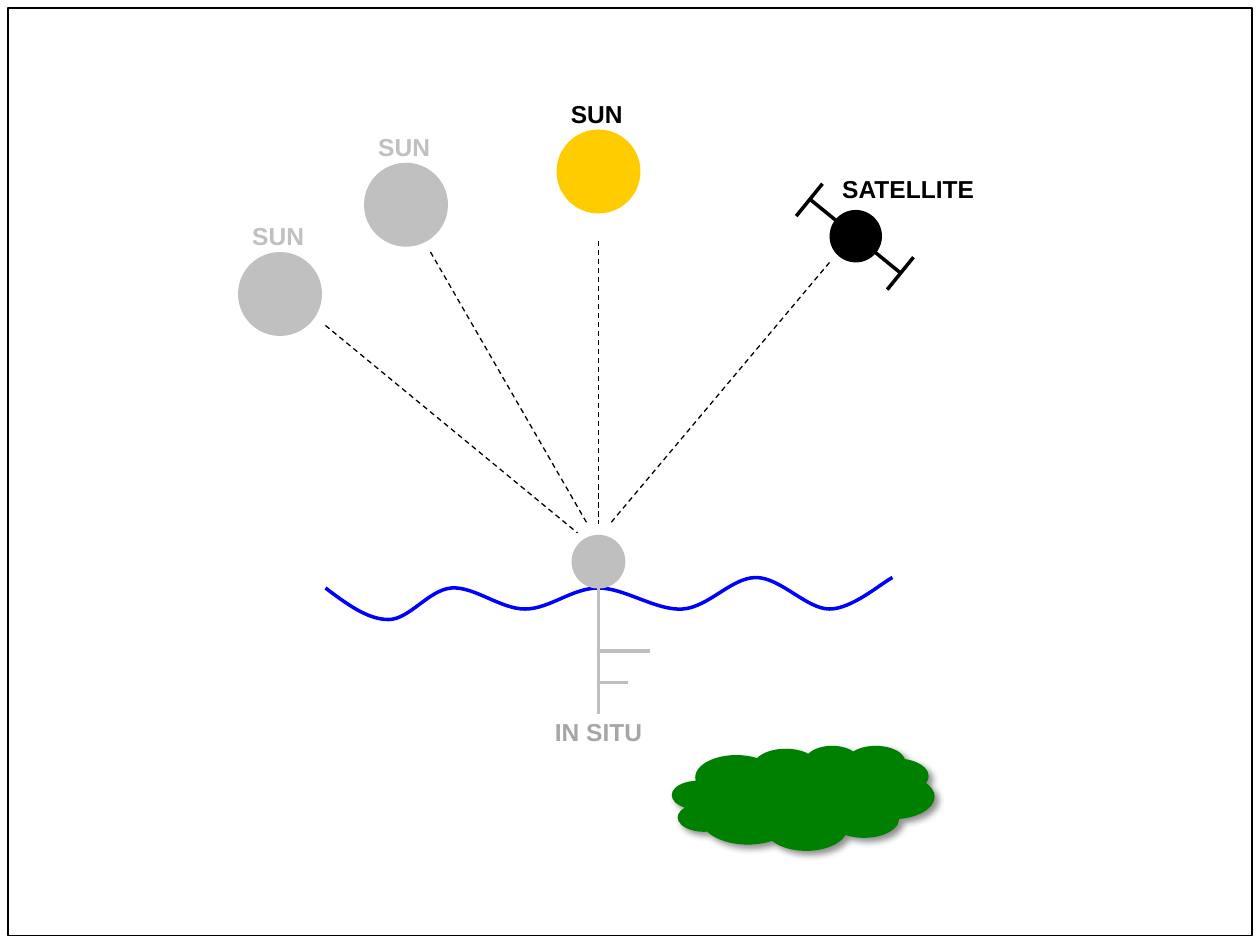
from lxml import etree
from pptx import Presentation
from pptx.dml.color import RGBColor
from pptx.enum.dml import MSO_LINE
from pptx.enum.shapes import MSO_CONNECTOR, MSO_SHAPE
from pptx.enum.text import MSO_AUTO_SIZE, PP_ALIGN
from pptx.oxml import parse_xml
from pptx.oxml.ns import qn
from pptx.util import Pt

RECT, OVAL, CLOUD = MSO_SHAPE.RECTANGLE, MSO_SHAPE.OVAL, MSO_SHAPE.CLOUD
STRAIGHT, DASH = MSO_CONNECTOR.STRAIGHT, MSO_LINE.DASH
CENTER, GROW = PP_ALIGN.CENTER, MSO_AUTO_SIZE.SHAPE_TO_FIT_TEXT
FONT = "Arial"
COLORS = {
    "black": "000000",
    "sun": "FFCC00",
    "faded": "C0C0C0",
    "buoy": "BFBFBF",
    "note": "A6A6A6",
    "sea": "0000FF",
    "land": "008000",
}
# Start of the wave, then two control points and an end point per curve
WAVE = [
    (186, 336),
    (198, 345), (210, 354), (222, 354),
    (234, 354), (245, 337), (258, 336),
    (271, 335), (286, 348), (300, 348),
    (314, 348), (327, 336), (342, 336),
    (357, 336), (375, 349), (390, 348),
    (405, 347), (418, 330), (432, 330),
    (446, 330), (461, 348), (474, 348),
    (487, 348), (504, 333), (510, 330),
]
RAYS = [
    ((246, 144), (336, 300)),
    ((186, 186), (330, 304.5)),
    ((342, 137.5), (342, 299.5)),
    ((474, 150), (348, 300)),
]
SHADOW = """
<a:effectLst xmlns:a="http://schemas.openxmlformats.org/drawingml/2006/main">
  <a:outerShdw blurRad="50800" dist="38100" dir="2700000" algn="tl" rotWithShape="0">
    <a:srgbClr val="000000"><a:alpha val="43000"/></a:srgbClr>
  </a:outerShdw>
</a:effectLst>"""


def rgb(name):
    return RGBColor.from_string(COLORS[name])


def shape(shapes, kind, left, top, width, height, fill=None, line=None):
    item = shapes.add_shape(kind, Pt(left), Pt(top), Pt(width), Pt(height))
    item.shadow.inherit = False
    if fill:
        item.fill.solid()
        item.fill.fore_color.rgb = rgb(fill)
    else:
        item.fill.background()
    if line:
        item.line.color.rgb = rgb(line)
        item.line.width = Pt(0.75)
    else:
        item.line.fill.background()
    return item


def line(shapes, start, end, color="black", width=2, dash=None):
    item = shapes.add_connector(STRAIGHT, *map(Pt, start + end))
    item.line.color.rgb = rgb(color)
    item.line.width = Pt(width)
    if dash:
        item.line.dash_style = dash
    etree.SubElement(item._element.spPr, qn("a:effectLst"))


def label(shapes, text, left, top, color):
    box = shapes.add_textbox(Pt(left), Pt(top), Pt(102), Pt(24))
    frame = box.text_frame
    frame.word_wrap = True
    frame.auto_size = GROW
    frame.text = text
    para = frame.paragraphs[0]
    para.alignment = CENTER
    font = para.runs[0].font
    font.name, font.size, font.bold = FONT, Pt(14), True
    font.color.rgb = rgb(color)


def curve(shapes, points, color):
    """Draw a smooth open line by turning each three segments into a Bezier."""
    spots = [(Pt(x), Pt(y)) for x, y in points]
    build = shapes.build_freeform(*spots[0])
    build.add_line_segments(spots[1:], close=False)
    item = build.convert_to_shape()
    item.shadow.inherit = False
    item.fill.background()
    item.line.color.rgb = rgb(color)
    item.line.width = Pt(2)
    route = item._element.find(".//" + qn("a:path"))
    steps = route.findall(qn("a:lnTo"))
    for i in range(0, len(steps), 3):
        bend = etree.SubElement(route, qn("a:cubicBezTo"))
        for step in steps[i:i + 3]:
            bend.append(step[0])
            route.remove(step)


def sun(shapes, left, top, fill, ink):
    shape(shapes, OVAL, left, top, 48, 48, fill)
    label(shapes, "SUN", left - 28, top - 21, ink)


def buoy(shapes):
    curve(shapes, WAVE, "sea")
    shape(shapes, OVAL, 327, 306, 30, 30, "buoy", "buoy")
    line(shapes, (342, 336), (342, 408), "buoy")
    for y, end in ((372, 371.5), (390, 359)):
        line(shapes, (341, y), (end, y), "buoy")


def probe(shapes):
    """Draw the satellite: body, boom and two panels."""
    body = shape(shapes, OVAL, 474, 120, 30, 30, "black")
    body.rotation = 39.3
    line(shapes, (463, 114), (514, 155.5))
    for x, y in ((470, 105), (522, 147)):
        line(shapes, (x, y), (x - 15, y + 18.5))


def main():
    deck = Presentation()
    deck.slide_width, deck.slide_height = Pt(720), Pt(540)
    shapes = deck.slides.add_slide(deck.slide_layouts[6]).shapes

    shape(shapes, RECT, 4.5, 4.5, 711, 530, line="black")
    buoy(shapes.add_group_shape().shapes)
    label(shapes, "IN SITU", 291, 406, "note")
    for left, top in ((208, 93), (136, 144)):
        sun(shapes, left, top, "faded", "faded")
    sun(shapes.add_group_shape().shapes, 318, 74, "sun", "black")
    probe(shapes.add_group_shape().shapes)
    label(shapes, "SATELLITE", 468, 96, "black")
    for start, end in RAYS:
        line(shapes, start, end, width=0.75, dash=DASH)

    cloud = shape(shapes, CLOUD, 384, 426, 150, 60, "land")
    props = cloud._element.spPr
    props.replace(props.find(qn("a:effectLst")), parse_xml(SHADOW))

    deck.save("out.pptx")


if __name__ == "__main__":
    main()
